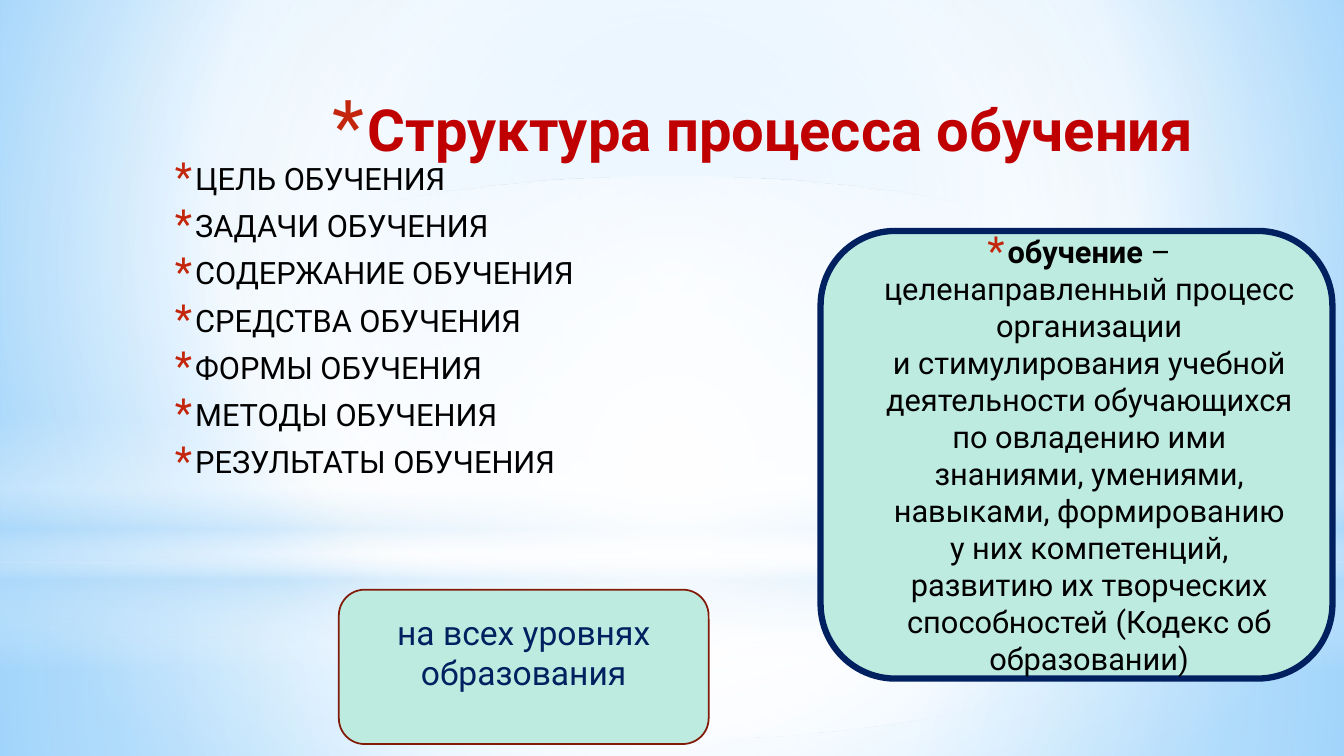
from dataclasses import dataclass

from lxml import etree
from pptx import Presentation
from pptx import util as u
from pptx.dml.color import RGBColor
from pptx.enum import shapes, text
from pptx.oxml import ns

Cm, Pt = u.Cm, u.Pt


@dataclass(frozen=True)
class Theme:
    font: str = "Roboto"
    title: str = "C00000"
    body: str = "000000"
    navy: str = "002060"
    bullet: str = "C3260C"
    mint: str = "BEEBDF"
    brown: str = "821A08"
    white: str = "FFFFFF"
    haze: str = "B4DCFA"
    sky: str = "9ED5FF"
    edge: str = "5BB9FF"
    title_size: float = 41.4
    body_size: float = 22
    level_size: float = 24


THEME = Theme()
WIDTH, HEIGHT = 33.87, 19.05
CENTRE = (50, 50, 50, 50)
HARD_SPACE = chr(160)


def add_xml(parent, tag, **attributes):
    values = {name: str(value) for name, value in attributes.items()}
    return etree.SubElement(parent, ns.qn(tag), values)


def set_gradient(fill, owner, stops, focus=None):
    """Fill with (position, colour, opacity) stops: circular around focus, else downwards."""
    fill.background()
    gradient = etree.Element(ns.qn("a:gradFill"), rotWithShape="1")
    stop_list = add_xml(gradient, "a:gsLst")
    for position, colour, opacity in stops:
        stop = add_xml(stop_list, "a:gs", pos=position * 1000)
        rgb = add_xml(stop, "a:srgbClr", val=colour)
        if opacity < 100:
            add_xml(rgb, "a:alpha", val=opacity * 1000)
    if focus:
        circle = add_xml(gradient, "a:path", path="circle")
        sides = {side: percent * 1000 for side, percent in zip("ltrb", focus)}
        add_xml(circle, "a:fillToRect", **sides)
    else:
        add_xml(gradient, "a:lin", ang=90 * 60000, scaled=0)
    owner.replace(owner.find(ns.qn("a:noFill")), gradient)


def add_glow(page, kind, top, height, stops, focus=None):
    """Add a full-width translucent shape behind the content."""
    glow = page.shapes.add_shape(kind, 0, Cm(top), Cm(WIDTH), Cm(height))
    glow.shadow.inherit = False
    glow.line.fill.background()
    set_gradient(glow.fill, glow.element.spPr, stops, focus)


def add_backdrop(page):
    white, haze = THEME.white, THEME.haze
    fill = page.background.fill
    fill.background()
    set_gradient(fill, page.element.find(".//" + ns.qn("p:bgPr")),
                 [(0, THEME.sky, 100), (60, white, 100), (100, THEME.edge, 100)],
                 (20, 10, 20, 60))
    kind = shapes.MSO_SHAPE
    horizon = 14.17
    add_glow(page, kind.RECTANGLE, horizon, HEIGHT - horizon,
             [(0, white, 91), (37, white, 76), (100, haze, 79)], CENTRE)
    add_glow(page, kind.RECTANGLE, 0, horizon,
             [(0, white, 89), (48, white, 62), (100, haze, 79)], CENTRE)
    add_glow(page, kind.RECTANGLE, 10.46, 6.35,
             [(0, white, 0), (29, white, 30), (45, haze, 40),
              (55, white, 26), (65, haze, 60), (100, white, 0)])
    add_glow(page, kind.OVAL, 4.45, horizon,
             [(0, white, 100), (56, white, 0)], CENTRE)


def add_text_box(page, left, top, width, height):
    box = page.shapes.add_textbox(Cm(left), Cm(top), Cm(width), Cm(height))
    box.text_frame.word_wrap = True
    return box


def add_card(page, left, top, width, height, line, weight):
    card = page.shapes.add_shape(shapes.MSO_SHAPE.ROUNDED_RECTANGLE,
                                 Cm(left), Cm(top), Cm(width), Cm(height))
    card.shadow.inherit = False
    card.fill.solid()
    card.fill.fore_color.rgb = RGBColor.from_string(THEME.mint)
    card.line.color.rgb = RGBColor.from_string(line)
    card.line.width = Pt(weight)
    card.text_frame.word_wrap = True
    card.text_frame.vertical_anchor = text.MSO_ANCHOR.MIDDLE
    return card


def add_span(para, words, size=THEME.body_size, colour=THEME.body, bold=False):
    span = para.add_run()
    span.text = words
    span.font.name = THEME.font
    span.font.size = Pt(size)
    span.font.bold = bold
    span.font.color.rgb = RGBColor.from_string(colour)


def add_bullet(para, margin=0.64, hanging=0.51, percent=130):
    properties = para._p.get_or_add_pPr()
    properties.set("marL", str(Cm(margin)))
    properties.set("indent", str(-Cm(hanging)))
    add_xml(add_xml(properties, "a:buClr"), "a:srgbClr", val=THEME.bullet)
    add_xml(properties, "a:buSzPct", val=percent * 1000)
    add_xml(properties, "a:buFont", typeface=THEME.font)
    add_xml(properties, "a:buChar", char="*")


def space_item(para):
    para.space_before = Pt(THEME.body_size * 0.2)
    para.space_after = Pt(3)


def add_list(box, items):
    frame = box.text_frame
    for index, item in enumerate(items):
        para = frame.add_paragraph() if index else frame.paragraphs[0]
        space_item(para)
        add_bullet(para)
        add_span(para, item)


def main():
    deck = Presentation()
    deck.slide_width, deck.slide_height = Cm(WIDTH), Cm(HEIGHT)
    page = deck.slides.add_slide(deck.slide_layouts[6])
    add_backdrop(page)

    title = add_text_box(page, 4.03, 2.24, 26.67, 1.65).text_frame.paragraphs[0]
    title.alignment = text.PP_ALIGN.RIGHT
    add_bullet(title, margin=0.89, hanging=0.89, percent=128)
    add_span(title, "Структура процесса обучения ", size=THEME.title_size,
             colour=THEME.title, bold=True)

    parts = ["ЦЕЛЬ", "ЗАДАЧИ", "СОДЕРЖАНИЕ", "СРЕДСТВА", "ФОРМЫ", "МЕТОДЫ", "РЕЗУЛЬТАТЫ"]
    add_list(add_text_box(page, 4.03, 3.89, 12.9, 11.28),
             [f"{part} ОБУЧЕНИЯ" for part in parts])

    card = add_card(page, 20.68, 5.82, 12.9, 11.28, THEME.navy, 4.5)
    definition = card.text_frame.paragraphs[0]
    definition.alignment = text.PP_ALIGN.CENTER
    space_item(definition)
    add_bullet(definition)
    add_span(definition, "обучение", bold=True)
    add_span(definition, f"{HARD_SPACE}– целенаправленный процесс организации "
             f"и{HARD_SPACE}стимулирования учебной деятельности обучающихся "
             f"по{HARD_SPACE}овладению ими знаниями, умениями, навыками, формированию "
             f"у{HARD_SPACE}них компетенций, развитию их творческих способностей "
             "(Кодекс об образовании)")

    card = add_card(page, 8.54, 14.86, 9.32, 3.89, THEME.brown, 1.25)
    card.text_frame.margin_bottom = Cm(0.87)
    levels = card.text_frame.paragraphs[0]
    levels.alignment = text.PP_ALIGN.CENTER
    add_span(levels, "на всех уровнях образования",
             size=THEME.level_size, colour=THEME.navy)

    deck.save("out.pptx")


if __name__ == "__main__":
    main()
